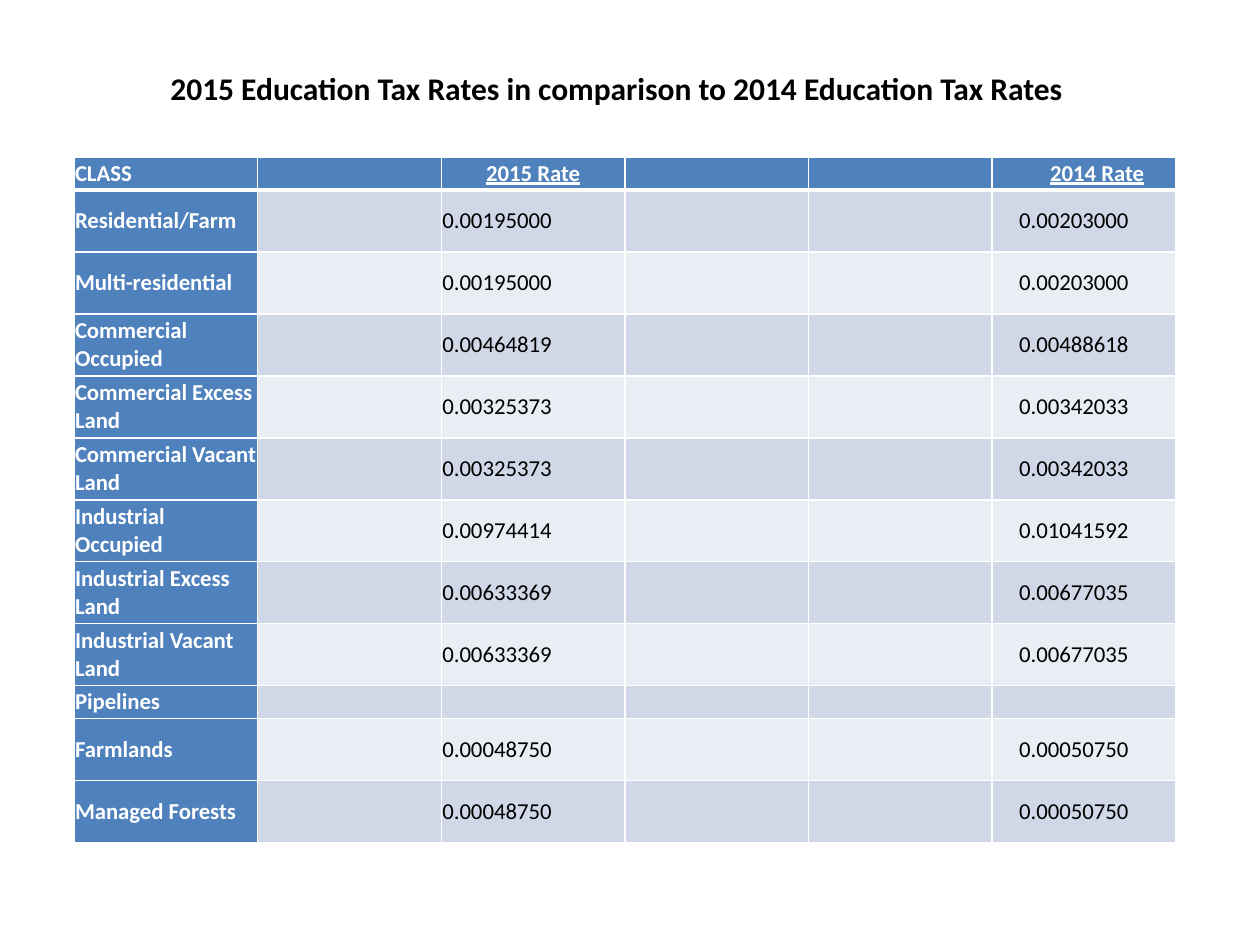
from lxml import etree
from pptx import Presentation, util as u
from pptx.dml.color import RGBColor
from pptx.enum import text
from pptx.oxml.ns import qn

WHITE = RGBColor(0xFF, 0xFF, 0xFF)
BLACK = RGBColor(0, 0, 0)
BLUE = RGBColor(0x4F, 0x81, 0xBD)
BANDS = RGBColor(0xD0, 0xD8, 0xE8), RGBColor(0xE9, 0xED, 0xF4)
FONT = "Calibri"
BODY_SIZE, TITLE_SIZE = 13, 18

TITLE = "2015 Education Tax Rates in comparison to 2014 Education Tax Rates"
HEADINGS = ("CLASS", "2015 Rate", "2014 Rate")
RATES = [
    ("Residential/Farm", "0.00195000", "0.00203000"),
    ("Multi-residential", "0.00195000", "0.00203000"),
    ("Commercial Occupied", "0.00464819", "0.00488618"),
    ("Commercial Excess Land", "0.00325373", "0.00342033"),
    ("Commercial Vacant Land", "0.00325373", "0.00342033"),
    ("Industrial Occupied", "0.00974414", "0.01041592"),
    ("Industrial Excess Land", "0.00633369", "0.00677035"),
    ("Industrial Vacant Land", "0.00633369", "0.00677035"),
    ("Pipelines", "", ""),
    ("Farmlands", "0.00048750", "0.00050750"),
    ("Managed Forests", "0.00048750", "0.00050750"),
]
CLASS_COL, RATE_2015_COL, RATE_2014_COL = 0, 2, 5
COLUMNS = 6
SHORT_ROW, TALL_ROW = 33, 62
TABLE_LEFT, TABLE_TOP, TABLE_WIDTH = 74, 157, 1102
INSET, RATE_2014_INDENT = 1, 27


def px(n):
    return u.Emu(round(n * 914400 / 126))


def add_run(paragraph, words, size, color, bold):
    run = paragraph.add_run()
    run.text = words
    run.font.name = FONT
    run.font.size = u.Pt(size)
    run.font.color.rgb = color
    run.font.bold = bold
    return run


def set_borders(cell, top, bottom):
    props = cell._tc.get_or_add_tcPr()
    sides = (("lnL", 1), ("lnR", 1), ("lnT", top), ("lnB", bottom))
    for place, (side, points) in enumerate(sides):
        line = etree.Element(qn(f"a:{side}"), w=str(u.Pt(points)))
        fill = etree.SubElement(line, qn("a:solidFill"))
        etree.SubElement(fill, qn("a:srgbClr"), val=str(WHITE))
        props.insert(place, line)


def fill_cell(cell, words, row, col):
    header = row == 0
    strong = header or col == CLASS_COL
    cell.fill.solid()
    cell.fill.fore_color.rgb = BLUE if strong else BANDS[(row - 1) % 2]
    set_borders(cell, 3 if row == 1 else 1, 3 if header else 1)
    cell.vertical_anchor = text.MSO_ANCHOR.MIDDLE
    cell.margin_left = px(RATE_2014_INDENT if col == RATE_2014_COL else INSET)
    cell.margin_right = cell.margin_top = cell.margin_bottom = px(INSET)
    paragraph = cell.text_frame.paragraphs[0]
    if not words:
        paragraph._p.get_or_add_endParaRPr().set("sz", str(BODY_SIZE * 100))
        return
    run = add_run(paragraph, words, BODY_SIZE, WHITE if strong else BLACK, strong)
    if header and col != CLASS_COL:
        paragraph.alignment = text.PP_ALIGN.CENTER
        run.font.underline = True


def add_rates(slide):
    rows = [HEADINGS, *RATES]
    heights = [TALL_ROW if rate and rate != HEADINGS[1] else SHORT_ROW
               for _, rate, _ in rows]
    rates = slide.shapes.add_table(
        len(rows), COLUMNS, px(TABLE_LEFT), px(TABLE_TOP),
        px(TABLE_WIDTH), px(sum(heights))).table
    for column in rates.columns:
        column.width = px(TABLE_WIDTH / COLUMNS)
    for r, (record, height) in enumerate(zip(rows, heights)):
        rates.rows[r].height = px(height)
        words = dict(zip((CLASS_COL, RATE_2015_COL, RATE_2014_COL), record))
        for c in range(COLUMNS):
            fill_cell(rates.cell(r, c), words.get(c, ""), r, c)


def add_title(slide):
    frame = slide.shapes.add_textbox(px(158), px(63), px(966), px(50)).text_frame
    frame.word_wrap = True
    frame.auto_size = text.MSO_AUTO_SIZE.SHAPE_TO_FIT_TEXT
    add_run(frame.paragraphs[0], TITLE, TITLE_SIZE, BLACK, True)


def main():
    deck = Presentation()
    deck.slide_width, deck.slide_height = px(1260), px(945)
    slide = deck.slides.add_slide(deck.slide_layouts[6])
    add_rates(slide)
    add_title(slide)
    deck.save("out.pptx")


if __name__ == "__main__":
    main()
